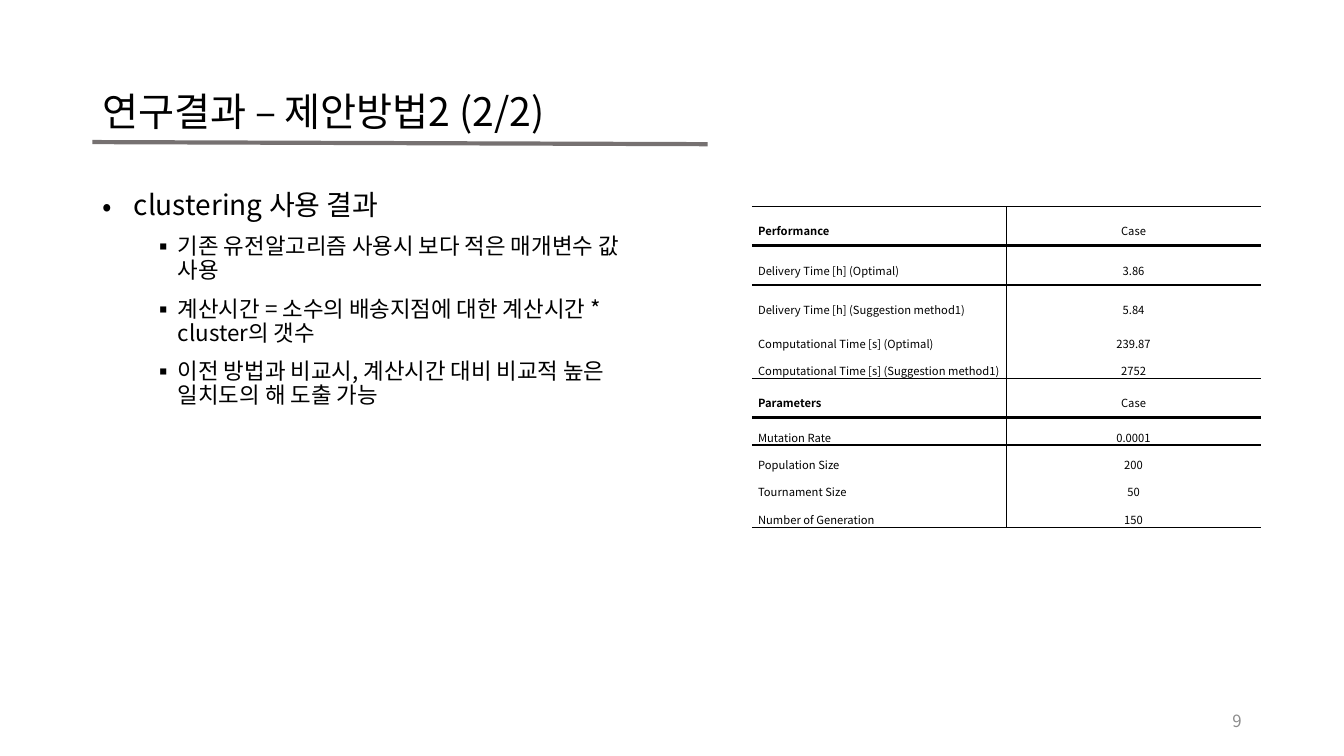
from dataclasses import dataclass
from lxml.etree import SubElement
from pptx import Presentation
from pptx.dml.color import RGBColor as Rgb
from pptx.enum.shapes import MSO_CONNECTOR as Link
from pptx.enum.text import MSO_ANCHOR as Anchor, PP_ALIGN as Align
from pptx.oxml.ns import qn
from pptx.util import Pt


@dataclass(frozen=True)
class Theme:
    face: str = "Noto Sans CJK KR"
    ink: str = "000000"
    rule: str = "767171"
    mute: str = "8C8C8C"
    title: int = 28
    lead: int = 20
    sub: int = 16
    page: int = 12
    cell: int = 8
    thin: float = 0.28
    thick: float = 1.98


theme = Theme()
NO_STYLE = "{2D5ABB26-0587-4C30-8999-92F81FD0307C}"

POINTS = [
    (" clustering 사용 결과", "•", theme.lead, 18),
    ("기존 유전알고리즘 사용시 보다 적은 매개변수 값 사용", "▪", theme.sub, 54),
    ("계산시간 = 소수의 배송지점에 대한 계산시간 * cluster의 갯수", "▪", theme.sub, 54),
    ("이전 방법과 비교시, 계산시간 대비 비교적 높은 일치도의 해 도출 가능", "▪", theme.sub, 54),
]

GROUPS = [
    [
        ("Performance", "Case", 28),
        ("Delivery Time [h] (Optimal)", "3.86", 28),
        ("Delivery Time [h] (Suggestion method1)", "5.84", 28),
        ("Computational Time [s] (Optimal)", "239.87", 19.5),
        ("Computational Time [s] (Suggestion method1)", "2752", 19.5),
    ],
    [
        ("Parameters", "Case", 28),
        ("Mutation Rate", "0.0001", 19.5),
        ("Population Size", "200", 19.5),
        ("Tournament Size", "50", 19.5),
        ("Number of Generation", "150", 19.5),
    ],
]


def style(para, text, size, color=theme.ink, align=Align.LEFT, space=1.0, bold=False):
    para.text = text
    para.alignment = align
    para.line_spacing = space
    font = para.font
    font.size = Pt(size)
    font.bold = bold
    font.color.rgb = Rgb.from_string(color)
    font.name = theme.face
    props = para._p.pPr.find(qn("a:defRPr"))
    SubElement(props, qn("a:ea"), typeface=theme.face)


def add_box(slide, left, top, width, height, anchor):
    box = slide.shapes.add_textbox(Pt(left), Pt(top), Pt(width), Pt(height))
    frame = box.text_frame
    frame.word_wrap = True
    frame.vertical_anchor = anchor
    return frame


def set_mark(para, mark, left):
    props = para._p.pPr
    props.set("marL", str(Pt(left)))
    props.set("indent", str(Pt(-18)))
    font = props.find(qn("a:defRPr"))
    for tag, key, value in (("a:buFont", "typeface", theme.face), ("a:buChar", "char", mark)):
        font.addprevious(SubElement(props, qn(tag), {key: value}))


def add_list(slide, items):
    frame = add_box(slide, 66, 133, 407.5, 343, Anchor.TOP)
    for num, (text, mark, size, left) in enumerate(items):
        para = frame.add_paragraph() if num else frame.paragraphs[0]
        style(para, text, size, space=0.9)
        para.space_before = Pt(10)
        set_mark(para, mark, left)


def add_rule(slide):
    line = slide.shapes.add_connector(Link.STRAIGHT, Pt(66), Pt(101.5), Pt(505.5), Pt(103))
    line.line.color.rgb = Rgb.from_string(theme.rule)
    line.line.width = Pt(3)
    SubElement(line._element.spPr, qn("a:effectLst"))


def set_edge(cell, side, width):
    props = cell._tc.get_or_add_tcPr()
    edge = SubElement(props, qn(f"a:ln{side}"), w=str(Pt(width)))
    fill = SubElement(edge, qn("a:solidFill"))
    SubElement(fill, qn("a:srgbClr"), val=theme.ink)


def fill_cell(cell, text, col, head, first, last):
    cell.margin_left = cell.margin_right = Pt(4.5)
    cell.margin_top = cell.margin_bottom = Pt(1.25)
    cell.vertical_anchor = Anchor.MIDDLE
    style(
        cell.text_frame.paragraphs[0], text, theme.cell, space=1.6,
        align=Align.CENTER if col else Align.LEFT, bold=head and col == 0,
    )
    set_edge(cell, "L" if col else "R", theme.thin)
    if head or first:
        set_edge(cell, "T", theme.thin if head else theme.thick)
    if head or last:
        set_edge(cell, "B", theme.thick if head else theme.thin)
    cell.fill.background()


def add_grid(slide, groups):
    count = sum(map(len, groups))
    frame = slide.shapes.add_table(count, 2, Pt(537), Pt(147.5), Pt(363.5), Pt(229))
    grid = frame.table
    grid.first_row = grid.horz_banding = False
    grid._tbl.tblPr.find(qn("a:tableStyleId")).text = NO_STYLE
    for col, width in enumerate((182, 181.5)):
        grid.columns[col].width = Pt(width)
    row = 0
    for group in groups:
        for pos, (label, value, height) in enumerate(group):
            grid.rows[row].height = Pt(height)
            for col, text in enumerate((label, value)):
                last = pos == len(group) - 1
                fill_cell(grid.cell(row, col), text, col, pos == 0, pos == 1, last)
            row += 1


def main():
    deck = Presentation()
    deck.slide_width, deck.slide_height = Pt(960), Pt(540)
    slide = deck.slides.add_slide(deck.slide_layouts[6])
    title = add_box(slide, 66, 28.75, 828, 104.5, Anchor.MIDDLE)
    style(title.paragraphs[0], "연구결과 – 제안방법2 (2/2)", theme.title, space=0.9)
    add_list(slide, POINTS)
    add_grid(slide, GROUPS)
    add_rule(slide)
    page = add_box(slide, 678, 500.5, 216, 28.75, Anchor.MIDDLE)
    style(page.paragraphs[0], "9", theme.page, theme.mute, Align.RIGHT)
    deck.save("out.pptx")


if __name__ == "__main__":
    main()
